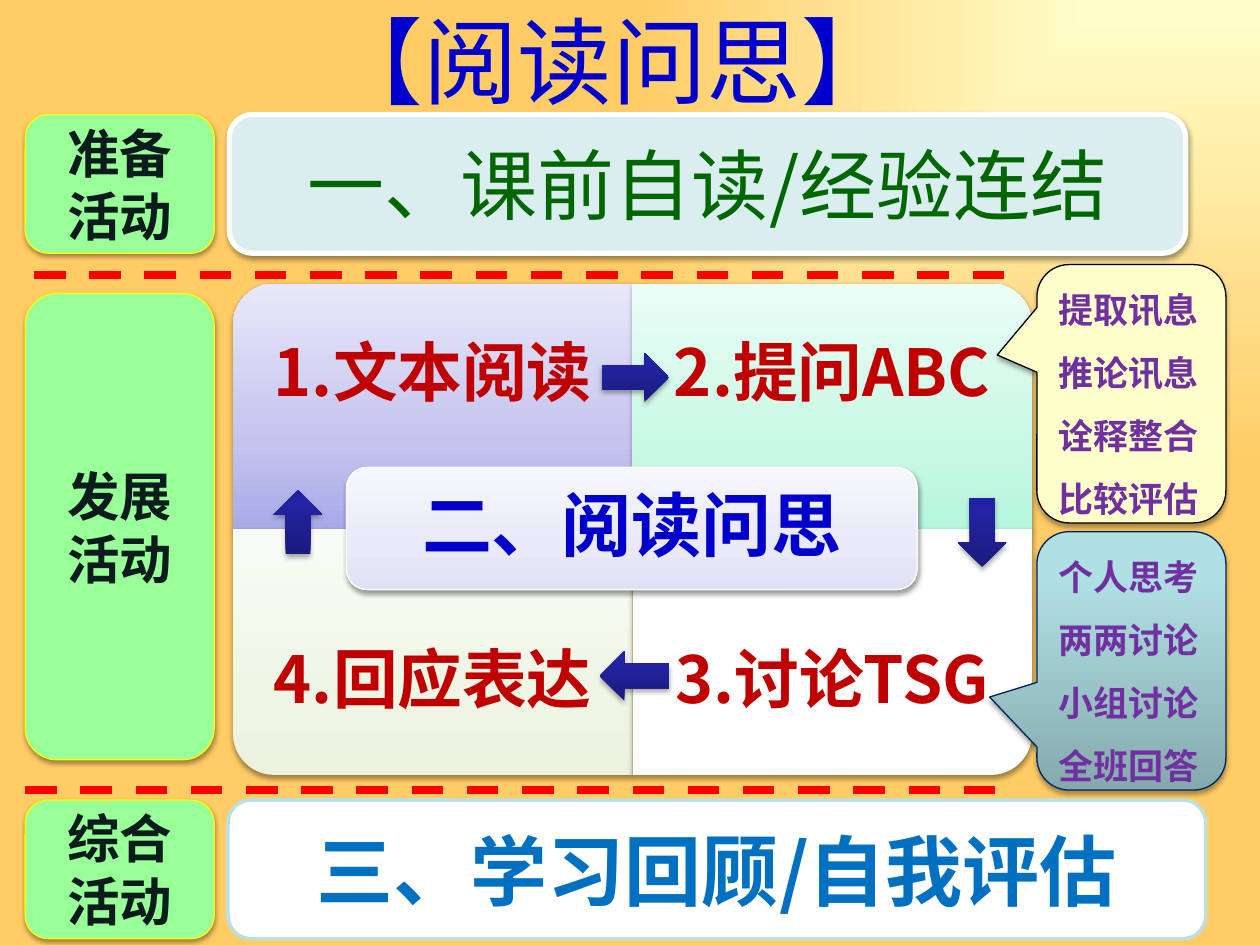
from dataclasses import dataclass

from pptx import Presentation
from pptx.dml.color import RGBColor
from pptx.enum.dml import MSO_LINE
from pptx.enum.shapes import MSO_CONNECTOR, MSO_SHAPE
from pptx.enum.text import MSO_ANCHOR, PP_ALIGN
from pptx.oxml.ns import qn
from pptx.util import Inches, Pt
from lxml import etree

ROUNDED = MSO_SHAPE.ROUNDED_RECTANGLE
QUARTER = MSO_SHAPE.ROUND_1_RECTANGLE
STAGE = MSO_SHAPE.FLOWCHART_ALTERNATE_PROCESS
CALLOUT = MSO_SHAPE.ROUNDED_RECTANGULAR_CALLOUT
RIGHT, DOWN = MSO_SHAPE.RIGHT_ARROW, MSO_SHAPE.DOWN_ARROW
LEFT, UP = MSO_SHAPE.LEFT_ARROW, MSO_SHAPE.UP_ARROW
CENTER, ALIGN_LEFT = PP_ALIGN.CENTER, PP_ALIGN.LEFT
MIDDLE = MSO_ANCHOR.MIDDLE
STRAIGHT = MSO_CONNECTOR.STRAIGHT
DASH = MSO_LINE.DASH


@dataclass(frozen=True)
class Theme:
    cjk: str = "Noto Sans CJK SC"
    latin: str = "Arial"
    title_size: int = 54
    banner_size: int = 44
    center_size: int = 40
    step_size: int = 37
    stage_size: int = 30
    note_size: int = 20
    blue: str = "0000CC"
    green: str = "006600"
    sky: str = "0070C0"
    red: str = "C00000"
    ink: str = "0C1C1D"
    purple: str = "7030A0"
    white: str = "FFFFFF"
    pale_teal: str = "DAEDEF"
    teal_edge: str = "BBE0E3"
    stage_fill: str = "99FF99"
    stage_edge: str = "FFFF00"
    cream: str = "FFFFCC"
    black: str = "000000"
    navy: str = "002060"
    divider: str = "FF0000"
    # Gradients are (position, colour) stops
    background: tuple = ((0, "FFFFCC"), (100, "FFCC66"))
    lilac: tuple = ((0, "A9A9E9"), (35, "C4C4EF"), (100, "E8E8FA"))
    mint: tuple = ((0, "B4F7DD"), (35, "CAF8E6"), (100, "EAFDF6"))
    leaf: tuple = ((0, "EBF2DD"), (35, "F0F6E6"), (100, "F9FCF5"))
    center_fill: tuple = ((0, "E1E1F6"), (35, "E9E9F8"), (100, "F6F6FD"))
    arrow: tuple = ((0, "1B1B7E"), (80, "2323A3"), (100, "2020A6"))
    lagoon: tuple = ((0, "AFE0E4"), (20, "AFDEE2"), (100, "85AAAD"))
    # Shadows are (opacity, blur, distance)
    soft_shadow: tuple = (38, 3.1, 1.6)
    deep_shadow: tuple = (35, 3.1, 1.8)


def child(parent, tag, **attributes):
    return etree.SubElement(parent, qn(tag), {k: str(v) for k, v in attributes.items()})


class SlideBuilder:
    def __init__(self, slide, theme):
        self.slide, self.theme = slide, theme

    def gradient(self, owner, fill, stops, angle=None):
        """Linear gradient at an angle, or one spreading from the top right."""
        fill.gradient()
        gradient = owner.find(".//" + qn("a:gradFill"))
        for old in list(gradient):
            gradient.remove(old)
        gradient.set("rotWithShape", "0")
        stop_list = child(gradient, "a:gsLst")
        for position, color in stops:
            stop = child(stop_list, "a:gs", pos=position * 1000)
            child(stop, "a:srgbClr", val=color)
        if angle is None:
            corner = child(gradient, "a:path", path="rect")
            child(corner, "a:fillToRect", l=100000, b=100000)
        else:
            child(gradient, "a:lin", ang=angle * 60000, scaled=0)

    def background(self, stops):
        self.gradient(self.slide._element, self.slide.background.fill, stops)

    def shape(self, kind, box, fill, edge=None, shadow=None, angle=270,
              rotation=0, adjustments=()):
        shape = self.slide.shapes.add_shape(kind, *map(Inches, box))
        shape.rotation = rotation
        for index, value in enumerate(adjustments):
            shape.adjustments[index] = value
        if isinstance(fill, str):
            shape.fill.solid()
            shape.fill.fore_color.rgb = RGBColor.from_string(fill)
        else:
            self.gradient(shape._element, shape.fill, fill, angle)
        if edge:
            color, width = edge
            shape.line.color.rgb = RGBColor.from_string(color)
            shape.line.width = Pt(width)
        else:
            shape.line.fill.background()
        shape.shadow.inherit = False
        if shadow:
            opacity, blur, distance = shadow
            effects = shape._element.spPr.find(qn("a:effectLst"))
            outer = child(effects, "a:outerShdw", blurRad=Pt(blur), dist=Pt(distance),
                          dir=90 * 60000, rotWithShape=0)
            color = child(outer, "a:srgbClr", val=self.theme.black)
            child(color, "a:alpha", val=opacity * 1000)
        return shape

    def add_lines(self, shape, lines, size, color, bold=True, align=CENTER,
                  spacing=1.0, inset=None, font=None):
        frame = shape.text_frame
        frame.word_wrap = True
        frame.vertical_anchor = MIDDLE
        if inset is not None:
            frame.margin_left = frame.margin_right = Inches(inset)
            frame.margin_top = frame.margin_bottom = Inches(inset)
        for index, line in enumerate(lines):
            paragraph = frame.add_paragraph() if index else frame.paragraphs[0]
            paragraph.alignment = align
            paragraph.line_spacing = spacing
            run = paragraph.add_run()
            run.text = line
            run.font.size = Pt(size)
            run.font.bold = bold
            run.font.name = font or self.theme.cjk
            run.font.color.rgb = RGBColor.from_string(color)
            if font is None:
                child(run._r.get_or_add_rPr(), "a:ea", typeface=self.theme.cjk)

    def text(self, box, line, size, color, **style):
        text_box = self.slide.shapes.add_textbox(*map(Inches, box))
        self.add_lines(text_box, [line], size, color, **style)

    def divider(self, left, top, width):
        line = self.slide.shapes.add_connector(
            STRAIGHT, Inches(left), Inches(top), Inches(left + width), Inches(top))
        line.line.color.rgb = RGBColor.from_string(self.theme.divider)
        line.line.width = Pt(4.5)
        line.line.dash_style = DASH
        child(line._element.spPr, "a:effectLst")


def main():
    theme = Theme()
    presentation = Presentation()
    presentation.slide_width, presentation.slide_height = Inches(10), Inches(7.5)
    builder = SlideBuilder(presentation.slides.add_slide(presentation.slide_layouts[6]), theme)
    builder.background(theme.background)
    soft, deep = theme.soft_shadow, theme.deep_shadow

    # Title
    builder.text((0.36, 0.13, 9, 0.69), "【阅读问思】", theme.title_size, theme.blue, bold=False)

    # Opening and closing banners
    for box, line, fill, edge, shadow, color, bold in (
        ((1.82, 0.91, 7.59, 1.1), "一、课前自读/经验连结", theme.pale_teal,
         (theme.white, 3), soft, theme.green, False),
        ((1.81, 6.35, 7.76, 1.1), "三、学习回顾/自我评估", theme.white,
         (theme.teal_edge, 2), None, theme.sky, True),
    ):
        banner = builder.shape(ROUNDED, box, fill, edge, shadow)
        builder.add_lines(banner, [line], theme.banner_size, color, bold)

    # Four-step matrix: each quarter turns its round corner outwards
    left, top, width, height, text_height = 1.85, 2.25, 3.17, 1.95, 1.46
    for column, row, rotation, fill, line in (
        (0, 0, 270, theme.lilac, "1.文本阅读"),
        (1, 0, 0, theme.mint, "2.提问ABC"),
        (0, 1, 180, theme.leaf, "4.回应表达"),
        (1, 1, 90, theme.white, "3.讨论TSG"),
    ):
        x, y = left + column * width, top + row * height
        turn = (width - height) / 2 if rotation % 180 else 0
        box = (x + turn, y - turn, width - 2 * turn, height + 2 * turn)
        builder.shape(QUARTER, box, fill, shadow=soft, rotation=rotation)
        text_top = y + row * (height - text_height)
        builder.text((x, text_top, width, text_height), line, theme.step_size, theme.red,
                     spacing=0.9, inset=0.29)

    # Matrix centre
    center = builder.shape(ROUNDED, (2.75, 3.71, 4.53, 0.97), theme.center_fill,
                           (theme.white, 0.75), soft)
    builder.add_lines(center, ["二、阅读问思"], theme.center_size, theme.blue,
                      spacing=0.9, inset=0.17)

    # Cycle arrows
    for kind, box in (
        (RIGHT, (4.78, 2.8, 0.53, 0.39)),
        (DOWN, (7.6, 3.95, 0.39, 0.55)),
        (LEFT, (4.76, 5.17, 0.55, 0.39)),
        (UP, (2.17, 3.89, 0.39, 0.51)),
    ):
        builder.shape(kind, box, theme.arrow, shadow=deep)

    # Callouts
    for y, fill, edge, tip, lines in (
        (4.22, theme.lagoon, theme.navy, (-0.75, 0.14),
         ["个人思考", "两两讨论", "小组讨论", "全班回答"]),
        (2.1, theme.cream, theme.black, (-0.71, -0.15),
         ["提取讯息推论讯息", "诠释整合", "比较评估"]),
    ):
        callout = builder.shape(CALLOUT, (8.23, y, 1.5, 2.05), fill, (edge, 0.75), deep,
                                angle=90, adjustments=(*tip, 0.17))
        builder.add_lines(callout, lines, theme.note_size, theme.purple, align=ALIGN_LEFT,
                          spacing=1.5, font=theme.latin)

    # Dividers between stages
    builder.divider(0.27, 2.18, 7.72)
    builder.divider(0.2, 6.27, 7.72)

    # Stage labels
    for y, label_height, line in (
        (0.91, 1.1, "准备活动"), (2.33, 3.7, "发展活动"), (6.35, 1.1, "综合活动"),
    ):
        stage = builder.shape(STAGE, (0.2, y, 1.5, label_height), theme.stage_fill,
                              (theme.stage_edge, 0.75), soft)
        builder.add_lines(stage, [line], theme.stage_size, theme.ink)

    presentation.save("out.pptx")


if __name__ == "__main__":
    main()
